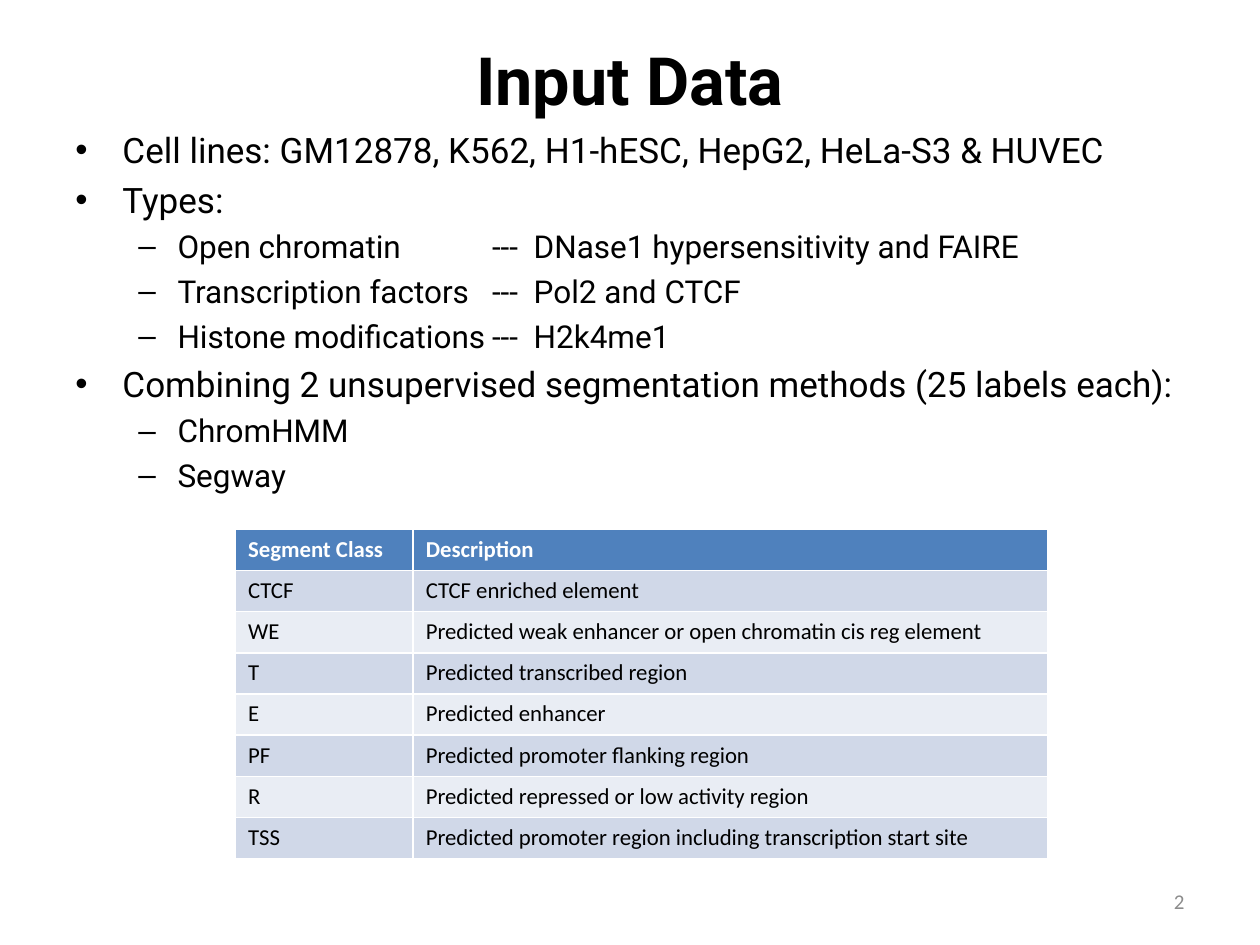
from lxml.etree import SubElement
from pptx import Presentation
from pptx.dml.color import RGBColor
from pptx.enum.text import MSO_ANCHOR as Anchor, PP_ALIGN as Align
from pptx.oxml.ns import qn
from pptx.util import Cm, Pt

# Content
TITLE = "Input Data"
BULLETS = [  # (level, text)
    (0, "Cell lines: GM12878, K562, H1-hESC, HepG2, HeLa-S3 & HUVEC"),
    (0, "Types:"),
    (1, "Open chromatin\t---\tDNase1 hypersensitivity and FAIRE"),
    (1, "Transcription factors\t---\tPol2 and CTCF"),
    (1, "Histone modifications\t---\tH2k4me1"),
    (0, "Combining 2 unsupervised segmentation methods (25 labels each):"),
    (1, "ChromHMM"),
    (1, "Segway"),
]
SEGMENTS = [
    ("Segment Class", "Description"),
    ("CTCF", "CTCF enriched element"),
    ("WE", "Predicted weak enhancer or open chromatin cis reg element"),
    ("T", "Predicted transcribed region"),
    ("E", "Predicted enhancer"),
    ("PF", "Predicted promoter flanking region"),
    ("R", "Predicted repressed or low activity region"),
    ("TSS", "Predicted promoter region including transcription start site"),
]
PAGE_NUMBER = "2"

# Format of each bullet level; lengths in cm, sizes in points
LEVELS = [
    dict(mark="•", indent=0.95, hanging=0.95, size=20, before=4.5),
    dict(mark="–", indent=2.06, hanging=0.79, size=18, before=4),
]
TAB_STOPS = (8.4, 9.24)
COLUMN_WIDTHS = (3.58, 12.8)
ROW_HEIGHT = 0.83
HEADER_FILL, BAND_FILLS = "4F81BD", ("E9EDF4", "D0D8E8")


def color(value):
    return RGBColor.from_string(value)


def write(para, text, size=18, font="Roboto", ink="000000", bold=False,
          align=Align.LEFT):
    para.alignment = align
    span = para.add_run()
    span.text = text
    span.font.name, span.font.size, span.font.bold = font, Pt(size), bold
    span.font.color.rgb = color(ink)


def add_box(page, left, top, width, height, anchor=Anchor.MIDDLE):
    frame = page.shapes.add_textbox(Cm(left), Cm(top), Cm(width), Cm(height)).text_frame
    frame.word_wrap = True
    frame.vertical_anchor = anchor
    return frame


def set_bullet(para, mark, indent, hanging):
    props = para._p.get_or_add_pPr()
    props.set("marL", str(Cm(indent)))
    props.set("indent", str(-Cm(hanging)))
    SubElement(props, qn("a:buFont")).set("typeface", "Arial")
    SubElement(props, qn("a:buChar")).set("char", mark)
    stops = SubElement(props, qn("a:tabLst"))
    for stop in TAB_STOPS:
        SubElement(stops, qn("a:tab"), pos=str(Cm(stop)), algn="l")


deck = Presentation()
deck.slide_width, deck.slide_height = Cm(25.4), Cm(19.05)
page = deck.slides.add_slide(deck.slide_layouts[6])

# Title
title = add_box(page, 1.27, 0, 22.86, 3.18)
write(title.paragraphs[0], TITLE, size=38, bold=True, align=Align.CENTER)

# Bullet list
body = add_box(page, 1.27, 2.46, 22.86, 12.57, anchor=Anchor.TOP)
for index, (level, text) in enumerate(BULLETS):
    look = LEVELS[level]
    para = body.add_paragraph() if index else body.paragraphs[0]
    para.level = level
    set_bullet(para, look["mark"], look["indent"], look["hanging"])
    para.space_before = Pt(look["before"] if index else 0)
    write(para, text, size=look["size"])

# Segment table: the default style supplies the white rules
table = page.shapes.add_table(
    len(SEGMENTS), len(COLUMN_WIDTHS), Cm(4.75), Cm(10.67),
    Cm(sum(COLUMN_WIDTHS)), Cm(ROW_HEIGHT * len(SEGMENTS))).table
for column, width in zip(table.columns, COLUMN_WIDTHS):
    column.width = Cm(width)
for row, texts in enumerate(SEGMENTS):
    header = row == 0
    table.rows[row].height = Cm(ROW_HEIGHT)
    for column, text in enumerate(texts):
        cell = table.cell(row, column)
        cell.fill.solid()
        cell.fill.fore_color.rgb = color(HEADER_FILL if header else BAND_FILLS[row % 2])
        write(cell.text_frame.paragraphs[0], text, size=13, font="Calibri",
              ink="FFFFFF" if header else "000000", bold=header)

# Page number
number = add_box(page, 18.2, 17.66, 5.93, 1.01)
write(number.paragraphs[0], PAGE_NUMBER, size=12, font="Calibri", ink="8C8C8C",
      align=Align.RIGHT)

deck.save("out.pptx")
